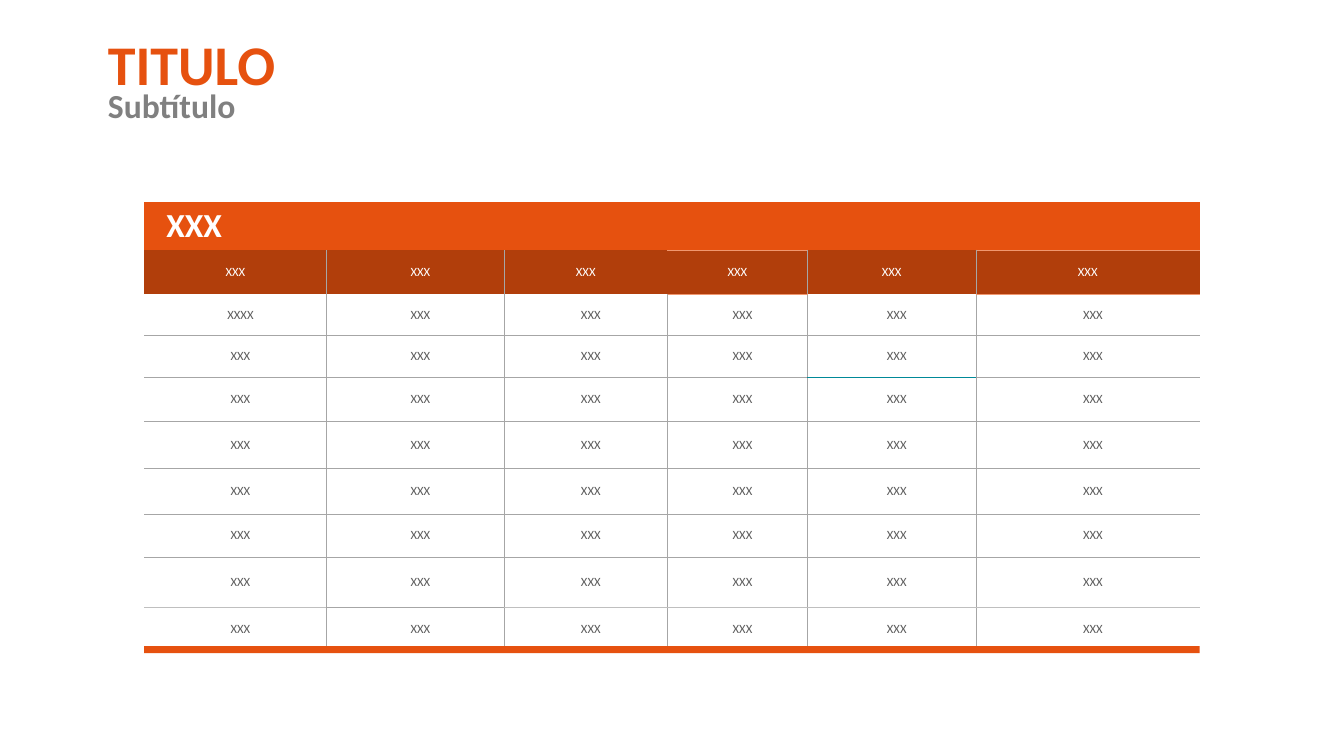
from dataclasses import dataclass

from lxml import etree
from pptx import Presentation
from pptx.dml.color import RGBColor
from pptx.enum.shapes import MSO_SHAPE
from pptx.enum.text import MSO_ANCHOR, MSO_AUTO_SIZE, PP_ALIGN
from pptx.oxml.ns import qn
from pptx.util import Inches, Pt

RECTANGLE = MSO_SHAPE.RECTANGLE
TOP, MIDDLE = MSO_ANCHOR.TOP, MSO_ANCHOR.MIDDLE
LEFT, CENTER = PP_ALIGN.LEFT, PP_ALIGN.CENTER
NO_AUTOFIT = MSO_AUTO_SIZE.NONE
PLAIN_TABLE_STYLE = "{2D5ABB26-0587-4C30-8999-92F81FD0307C}"

TITLE = "TITULO"
SUBTITLE = "Subtítulo"
CAPTION = "XXX"
HEADERS = ["XXX"] * 6
BODY = [["XXXX"] + ["XXX"] * 5] + [["XXX"] * 6 for _ in range(7)]

TABLE_LEFT, TABLE_TOP = 1.43, 2.0
COLUMN_WIDTHS = [1.81, 1.76, 1.62, 1.39, 1.67, 2.22]
ROW_HEIGHTS = [0.48, 0.44, 0.41, 0.41, 0.44, 0.47, 0.45, 0.43, 0.5, 0.43]
TEXT_INDENT = 0.1
CAPTION_ROW, HEADER_ROW = 0, 1
LAST_ROW, LAST_COLUMN = len(ROW_HEIGHTS) - 1, len(COLUMN_WIDTHS) - 1


@dataclass(frozen=True)
class Theme:
    font: str = "Calibri"
    orange: str = "E6510F"
    dark_orange: str = "B13E0B"
    light_orange: str = "F0976F"
    white: str = "FFFFFF"
    subtitle: str = "808080"
    body: str = "5D5D5D"
    grid: str = "A6A6A6"
    light_grid: str = "BFBFBF"
    teal: str = "008998"
    title_size: int = 40
    heading_size: int = 24
    cell_size: int = 9


THEME = Theme()


def write_text(text_frame, text, size, color, bold=False, align=LEFT, indent=0):
    paragraph = text_frame.paragraphs[0]
    paragraph.text = text
    paragraph.alignment = align
    paragraph.space_before = Pt(0)
    if indent:
        paragraph._p.get_or_add_pPr().set("marL", str(Inches(indent)))
    font = paragraph.runs[0].font
    font.name, font.size, font.bold = THEME.font, Pt(size), bold
    font.color.rgb = RGBColor.from_string(color)


def fill_placeholder(placeholder, box, text, size, color):
    placeholder.left, placeholder.top, placeholder.width, placeholder.height = map(Inches, box)
    frame = placeholder.text_frame
    frame.word_wrap = False
    frame.auto_size = NO_AUTOFIT
    frame.vertical_anchor = TOP
    write_text(frame, text, size, color, bold=True)


def cell_borders(row, column):
    """Return (side, colour, points) for each line of a cell, in schema order."""
    borders = []
    if row == CAPTION_ROW:
        return borders
    ruled_columns = (0, 3) if row == HEADER_ROW else range(LAST_COLUMN)
    if column - 1 in ruled_columns:
        borders.append(("lnL", THEME.grid, 0.5))
    if column in ruled_columns:
        borders.append(("lnR", THEME.grid, 0.5))
    if row == HEADER_ROW:
        if column in (3, 5):
            borders.append(("lnT", THEME.light_orange, 0.5))
        return borders
    if row > HEADER_ROW + 1:
        borders.append(("lnT", *rule_below(row - 1, column)))
    if row < LAST_ROW:
        borders.append(("lnB", *rule_below(row, column)))
    return borders


def rule_below(row, column):
    if (row, column) == (3, 4):
        return THEME.teal, 0.25
    if row == LAST_ROW - 1 and column != 1:
        return THEME.light_grid, 0.5
    return THEME.grid, 0.5


def draw_borders(cell, borders):
    properties = cell._tc.get_or_add_tcPr()
    for position, (side, color, points) in enumerate(borders):
        line = etree.Element(qn(f"a:{side}"), w=str(Pt(points)))
        solid = etree.SubElement(line, qn("a:solidFill"))
        etree.SubElement(solid, qn("a:srgbClr"), val=color)
        properties.insert(position, line)


def format_cell(cell, text, fill=None, left_margin=0, **text_format):
    cell.vertical_anchor = MIDDLE
    cell.margin_left = Inches(left_margin)
    cell.margin_right = cell.margin_top = cell.margin_bottom = 0
    if fill:
        cell.fill.solid()
        cell.fill.fore_color.rgb = RGBColor.from_string(fill)
    else:
        cell.fill.background()
    write_text(cell.text_frame, text, **text_format)


def add_data_table(slide):
    frame = slide.shapes.add_table(
        len(ROW_HEIGHTS), len(COLUMN_WIDTHS), Inches(TABLE_LEFT), Inches(TABLE_TOP),
        Inches(sum(COLUMN_WIDTHS)), Inches(sum(ROW_HEIGHTS)))
    table = frame.table
    table._tbl.tblPr.find(qn("a:tableStyleId")).text = PLAIN_TABLE_STYLE
    table.first_row = table.horz_banding = False
    for column, width in zip(table.columns, COLUMN_WIDTHS):
        column.width = Inches(width)
    for row, height in zip(table.rows, ROW_HEIGHTS):
        row.height = Inches(height)

    table.cell(CAPTION_ROW, 0).merge(table.cell(CAPTION_ROW, LAST_COLUMN))
    format_cell(table.cell(CAPTION_ROW, 0), CAPTION, fill=THEME.orange, left_margin=0.12,
                size=THEME.heading_size, color=THEME.white, bold=True, indent=TEXT_INDENT)
    for row, texts in enumerate([HEADERS] + BODY, start=HEADER_ROW):
        is_header = row == HEADER_ROW
        for column, text in enumerate(texts):
            cell = table.cell(row, column)
            format_cell(cell, text, fill=THEME.dark_orange if is_header else None,
                        size=THEME.cell_size, align=CENTER,
                        color=THEME.white if is_header else THEME.body,
                        indent=0 if is_header and column != 1 else TEXT_INDENT)
            draw_borders(cell, cell_borders(row, column))


def add_bottom_bar(slide):
    bar = slide.shapes.add_shape(RECTANGLE, Inches(TABLE_LEFT), Inches(6.41),
                                 Inches(sum(COLUMN_WIDTHS)), Inches(0.07))
    bar.shadow.inherit = False
    bar.fill.solid()
    bar.fill.fore_color.rgb = RGBColor.from_string(THEME.orange)
    bar.line.fill.background()


def main():
    presentation = Presentation()
    presentation.slide_width, presentation.slide_height = Inches(13.33), Inches(7.5)
    slide = presentation.slides.add_slide(presentation.slide_layouts[0])
    fill_placeholder(slide.shapes.title, (0.97, 0.24, 1.88, 0.77),
                     TITLE, THEME.title_size, THEME.orange)
    fill_placeholder(slide.placeholders[1], (0.97, 0.79, 1.48, 0.5),
                     SUBTITLE, THEME.heading_size, THEME.subtitle)
    add_data_table(slide)
    add_bottom_bar(slide)
    presentation.save("out.pptx")


if __name__ == "__main__":
    main()
